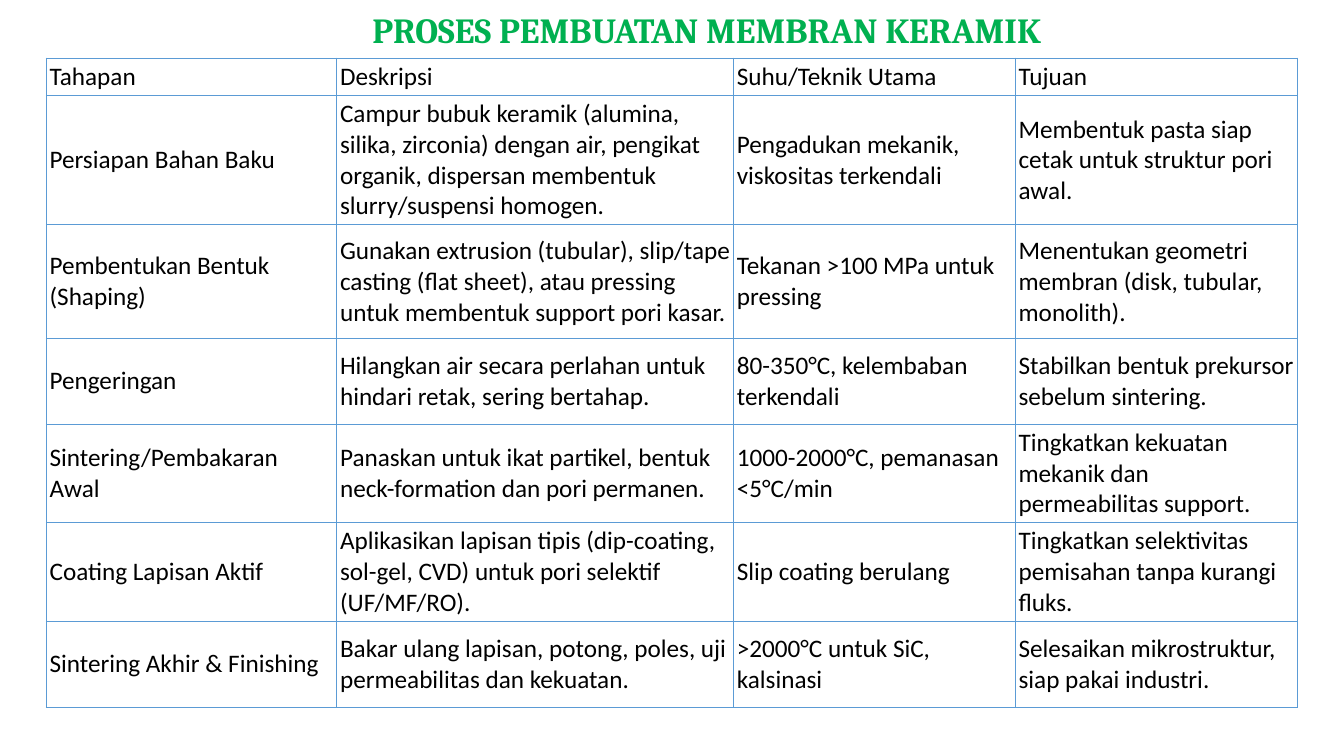
from lxml import etree
from pptx import Presentation
from pptx.dml.color import RGBColor
from pptx.enum.text import MSO_ANCHOR, PP_ALIGN
from pptx.oxml.ns import qn
from pptx.util import Cm, Pt

MIDDLE = MSO_ANCHOR.MIDDLE
CENTER = PP_ALIGN.CENTER
LEFT = PP_ALIGN.LEFT

GREEN = RGBColor(0x00, 0xB0, 0x50)
BLACK = RGBColor(0x00, 0x00, 0x00)
BLUE = RGBColor(0x5B, 0x9B, 0xD5)

TITLE_ONLY = 5
COLUMN_WIDTHS = [7.32, 10, 7.1, 7.1]
ROW_HEIGHTS = [0.93, 3.25, 2.86, 2.16, 2.48, 2.48, 2.16]
CELL_MARGIN = Cm(0.08)

STAGES = [
    ("Tahapan", "Deskripsi", "Suhu/Teknik Utama", "Tujuan"),
    ("Persiapan Bahan Baku",
     "Campur bubuk keramik (alumina, silika, zirconia) dengan air, pengikat organik, "
     "dispersan membentuk slurry/suspensi homogen.",
     "Pengadukan mekanik, viskositas terkendali",
     "Membentuk pasta siap cetak untuk struktur pori awal."),
    ("Pembentukan Bentuk (Shaping)",
     "Gunakan extrusion (tubular), slip/tape casting (flat sheet), atau pressing "
     "untuk membentuk support pori kasar.",
     "Tekanan >100 MPa untuk pressing",
     "Menentukan geometri membran (disk, tubular, monolith)."),
    ("Pengeringan",
     "Hilangkan air secara perlahan untuk hindari retak, sering bertahap.",
     "80-350°C, kelembaban terkendali",
     "Stabilkan bentuk prekursor sebelum sintering."),
    ("Sintering/Pembakaran Awal",
     "Panaskan untuk ikat partikel, bentuk neck-formation dan pori permanen.",
     "1000-2000°C, pemanasan <5°C/min",
     "Tingkatkan kekuatan mekanik dan permeabilitas support."),
    ("Coating Lapisan Aktif",
     "Aplikasikan lapisan tipis (dip-coating, sol-gel, CVD) untuk pori selektif (UF/MF/RO).",
     "Slip coating berulang",
     "Tingkatkan selektivitas pemisahan tanpa kurangi fluks."),
    ("Sintering Akhir & Finishing",
     "Bakar ulang lapisan, potong, poles, uji permeabilitas dan kekuatan.",
     ">2000°C untuk SiC, kalsinasi",
     "Selesaikan mikrostruktur, siap pakai industri."),
]


def write_text(frame, text, *, font, size, color, bold=False, align=LEFT, spacing=1.0):
    frame.word_wrap = True
    para = frame.paragraphs[0]
    para.alignment = align
    para.line_spacing = spacing
    span = para.add_run()
    span.text = text
    span.font.name = font
    span.font.size = Pt(size)
    span.font.bold = bold
    span.font.color.rgb = color


def set_borders(cell, color, width):
    properties = cell._tc.get_or_add_tcPr()
    for position, side in enumerate(("a:lnL", "a:lnR", "a:lnT", "a:lnB")):
        line = etree.Element(qn(side), w=str(Pt(width)))
        fill = etree.SubElement(line, qn("a:solidFill"))
        etree.SubElement(fill, qn("a:srgbClr"), val=str(color))
        properties.insert(position, line)


def add_title(page, text):
    title = page.shapes.title
    title.left, title.top = Cm(1.73), Cm(0.46)
    title.width, title.height = Cm(32.16), Cm(0.69)
    title.text_frame.vertical_anchor = MIDDLE
    write_text(title.text_frame, text, font="Cambria", size=25.2, color=GREEN,
               bold=True, align=CENTER, spacing=0.9)


def fill_cell(cell, text):
    cell.fill.background()
    cell.vertical_anchor = MIDDLE
    cell.margin_left = cell.margin_right = CELL_MARGIN
    cell.margin_top = cell.margin_bottom = CELL_MARGIN
    write_text(cell.text_frame, text, font="Calibri", size=18, color=BLACK)
    set_borders(cell, BLUE, 1)


def add_stage_table(page):
    frame = page.shapes.add_table(
        len(STAGES), len(COLUMN_WIDTHS), Cm(1.17), Cm(1.47),
        Cm(sum(COLUMN_WIDTHS)), Cm(sum(ROW_HEIGHTS)))
    table = frame.table
    table.first_row = False
    table.horz_banding = False
    for column, width in zip(table.columns, COLUMN_WIDTHS):
        column.width = Cm(width)
    for row, height, texts in zip(table.rows, ROW_HEIGHTS, STAGES):
        row.height = Cm(height)
        for cell, text in zip(row.cells, texts):
            fill_cell(cell, text)


def main():
    deck = Presentation()
    deck.slide_width, deck.slide_height = Cm(33.87), Cm(19.05)
    page = deck.slides.add_slide(deck.slide_layouts[TITLE_ONLY])
    add_title(page, "PROSES PEMBUATAN MEMBRAN KERAMIK")
    add_stage_table(page)
    deck.save("out.pptx")


if __name__ == "__main__":
    main()
